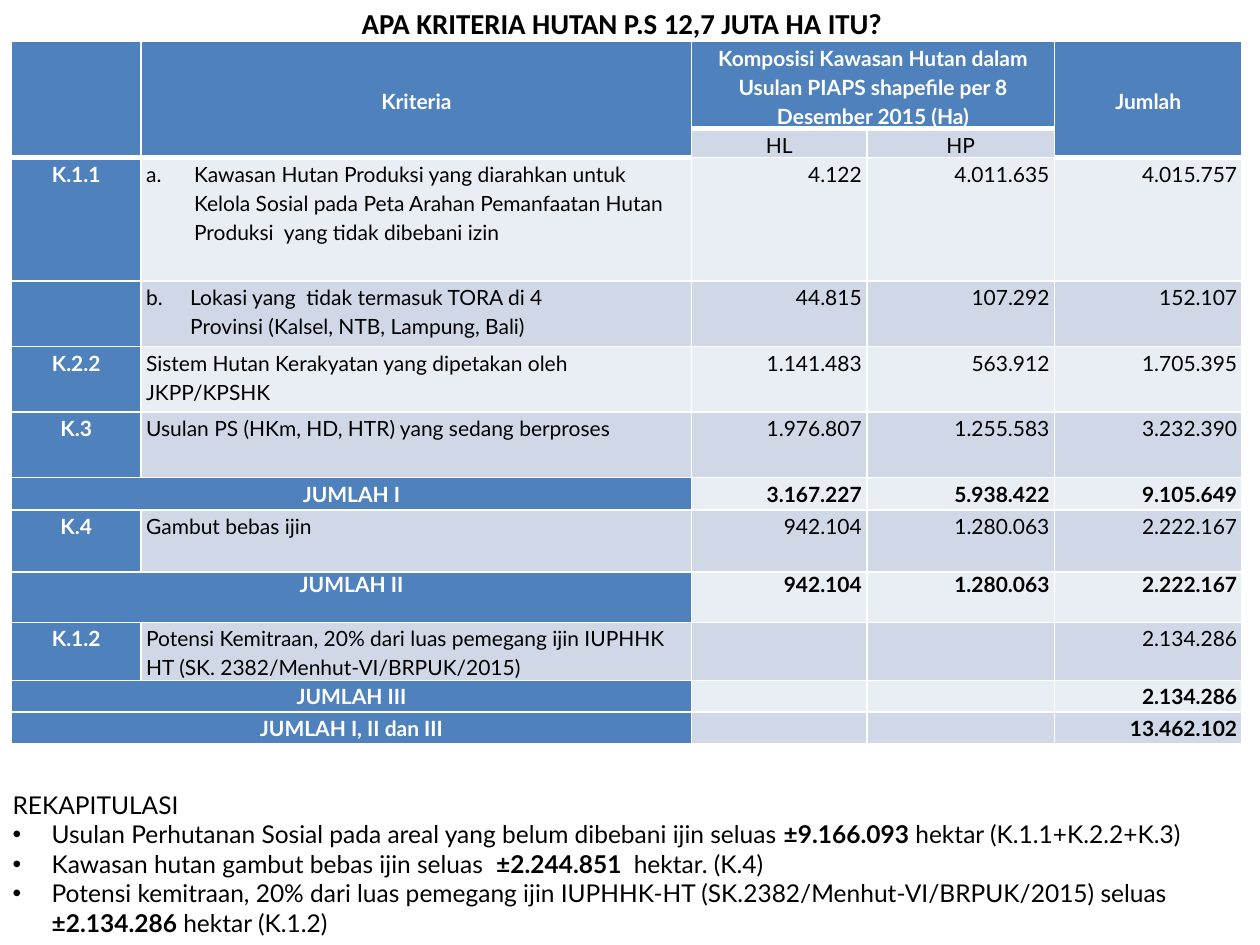
from dataclasses import dataclass

from lxml.etree import SubElement
from pptx import Presentation
from pptx.dml.color import RGBColor
from pptx.enum.text import MSO_ANCHOR, MSO_AUTO_SIZE, PP_ALIGN
from pptx.oxml.ns import qn
from pptx.util import Inches, Pt


@dataclass(frozen=True)
class Theme:
    header: str = "4F81BD"
    bands: tuple = ("D0D8E8", "E9EDF4")
    white: str = "FFFFFF"
    black: str = "000000"
    title_font: str = "Calibri"
    body_font: str = "Lato"
    title_size: float = 16.5
    body_size: float = 14
    table_size: float = 12


THEME = Theme()
TITLE = "APA KRITERIA HUTAN P.S 12,7 JUTA HA ITU?"
COL_WIDTHS = [1.03, 4.37, 1.39, 1.49, 1.49]
HEADER_HEIGHTS = [0.69, 0.22]
HEADERS = {
    (0, 1): "Kriteria",
    (0, 2): "Komposisi Kawasan Hutan dalam Usulan PIAPS shapefile per 8 Desember 2015 (Ha)",
    (0, 4): "Jumlah",
}
# Height, code or total label, criterion (None for a total), HL, HP, sum
ROWS = [
    (0.98, "K.1.1", "Kawasan Hutan Produksi yang diarahkan untuk Kelola Sosial pada Peta "
     "Arahan Pemanfaatan Hutan Produksi  yang tidak dibebani izin",
     "4.122", "4.011.635", "4.015.757"),
    (0.52, "", "Lokasi yang  tidak termasuk TORA di 4\vProvinsi (Kalsel, NTB, Lampung, Bali)",
     "44.815", "107.292", "152.107"),
    (0.52, "K.2.2", "Sistem Hutan Kerakyatan yang dipetakan oleh JKPP/KPSHK",
     "1.141.483", "563.912", "1.705.395"),
    (0.52, "K.3", "Usulan PS (HKm, HD, HTR) yang sedang berproses",
     "1.976.807", "1.255.583", "3.232.390"),
    (0.26, "JUMLAH I", None, "3.167.227", "5.938.422", "9.105.649"),
    (0.49, "K.4", "Gambut bebas ijin", "942.104", "1.280.063", "2.222.167"),
    (0.4, "JUMLAH II", None, "942.104", "1.280.063", "2.222.167"),
    (0.46, "K.1.2", "Potensi Kemitraan, 20% dari luas pemegang ijin IUPHHK HT "
     "(SK. 2382/Menhut-VI/BRPUK/2015)", "", "", "2.134.286"),
    (0.25, "JUMLAH III", None, "", "", "2.134.286"),
    (0.25, "JUMLAH I, II dan III", None, "", "", "13.462.102"),
]
LETTERED = {2: ("1", 0.38), 3: ("2", 0.35)}  # table row: list number, indent
# Runs alternate between regular and bold
RECAP = [
    ["REKAPITULASI"],
    ["Usulan Perhutanan Sosial pada areal yang belum dibebani ijin seluas ",
     "±9.166.093 ", "hektar (K.1.1+K.2.2+K.3)"],
    ["Kawasan hutan gambut bebas ijin seluas  ", "±2.244.851  ", "hektar. (K.4)"],
    ["Potensi kemitraan, 20% dari luas pemegang ijin IUPHHK-HT "
     "(SK.2382/Menhut-VI/BRPUK/2015) seluas ", "±2.134.286 ", "hektar (K.1.2)"],
]


def set_attrs(obj, values):
    for name, value in values.items():
        setattr(obj, name, value)


def style_run(r, font, size, color, bold):
    set_attrs(r.font, {"name": font, "size": Pt(size), "bold": bold})
    r.font.color.rgb = RGBColor.from_string(color)


def place(sp, left, top, width, height):
    set_attrs(sp, {"left": Inches(left), "top": Inches(top),
                   "width": Inches(width), "height": Inches(height)})


def set_bullet(p, indent, tag, **attrs):
    """Give the paragraph a hanging indent and the bullet element named by tag."""
    pPr = p._p.get_or_add_pPr()
    pPr.set("marL", str(Inches(indent)))
    pPr.set("indent", str(-Inches(indent)))
    SubElement(pPr, qn(tag), attrs)


def set_borders(cell, bottom):
    tcPr = cell._tc.get_or_add_tcPr()
    for side, width in {"L": 1, "R": 1, "T": 1, "B": bottom}.items():
        ln = SubElement(tcPr, qn(f"a:ln{side}"), w=str(Pt(width)))
        fill = SubElement(ln, qn("a:solidFill"))
        SubElement(fill, qn("a:srgbClr"), val=THEME.white)


def style_cell(cell, fill, bottom=1):
    set_attrs(cell, {"margin_left": Inches(0.04), "margin_right": Inches(0.04),
                     "margin_top": 0, "margin_bottom": 0})
    set_borders(cell, bottom)
    cell.fill.solid()
    cell.fill.fore_color.rgb = RGBColor.from_string(fill)
    # Keeps empty cells from stretching their row
    SubElement(cell.text_frame.paragraphs[0]._p, qn("a:endParaRPr"),
               sz=str(THEME.table_size * 100))


def write_cell(cell, text, align, color, bold=False, spacing=1.15):
    if not text:
        return
    p = cell.text_frame.paragraphs[0]
    p.text = text
    set_attrs(p, {"alignment": align, "line_spacing": spacing})
    for r in p.runs:
        style_run(r, THEME.body_font, THEME.table_size, color, bold)


def fill_header(table):
    for row in range(2):
        for col in range(5):
            sub = row == 1 and col in (2, 3)
            style_cell(table.cell(row, col), THEME.bands[0] if sub else THEME.header,
                       1 if sub else 3)
    for col in (0, 1, 4):
        table.cell(0, col).merge(table.cell(1, col))
    table.cell(0, 2).merge(table.cell(0, 3))
    for (row, col), text in HEADERS.items():
        cell = table.cell(row, col)
        write_cell(cell, text, PP_ALIGN.CENTER, THEME.white, True)
        if col != 2:
            cell.vertical_anchor = MSO_ANCHOR.MIDDLE
    for col, text in ((2, "HL"), (3, "HP")):
        write_cell(table.cell(1, col), text, PP_ALIGN.CENTER, THEME.black)


def fill_row(table, row, label, criterion, *values):
    total = criterion is None
    spacing = 1.0 if label == "JUMLAH II" else 1.15
    band = THEME.bands[(row + 1) % 2]
    for col in range(5):
        is_label = col == 0 or (total and col == 1)
        style_cell(table.cell(row, col), THEME.header if is_label else band)
    if total:
        table.cell(row, 0).merge(table.cell(row, 1))
    else:
        write_cell(table.cell(row, 1), criterion, PP_ALIGN.LEFT, THEME.black)
    write_cell(table.cell(row, 0), label, PP_ALIGN.CENTER, THEME.white, True, spacing)
    for col, value in enumerate(values, 2):
        write_cell(table.cell(row, col), value, PP_ALIGN.RIGHT, THEME.black, total, spacing)
    if row in LETTERED:
        number, indent = LETTERED[row]
        set_bullet(table.cell(row, 1).text_frame.paragraphs[0], indent,
                   "a:buAutoNum", type="alphaLcPeriod", startAt=number)


def add_criteria_table(s):
    heights = HEADER_HEIGHTS + [height for height, *_ in ROWS]
    frame = s.shapes.add_table(len(heights), len(COL_WIDTHS), Inches(0.09), Inches(0.33),
                               Inches(sum(COL_WIDTHS)), Inches(sum(heights)))
    table = frame.table
    set_attrs(table, {"first_row": False, "horz_banding": False})
    for column, width in zip(table.columns, COL_WIDTHS):
        column.width = Inches(width)
    for table_row, height in zip(table.rows, heights):
        table_row.height = Inches(height)
    fill_header(table)
    for row, (_, *content) in enumerate(ROWS, len(HEADER_HEIGHTS)):
        fill_row(table, row, *content)


def write_title(sp):
    place(sp, 0.52, 0, 8.83, 0.37)
    tf = sp.text_frame
    set_attrs(tf, {"text": TITLE, "auto_size": MSO_AUTO_SIZE.NONE, "word_wrap": True})
    p = tf.paragraphs[0]
    p.alignment = PP_ALIGN.CENTER
    style_run(p.runs[0], THEME.title_font, THEME.title_size, THEME.black, True)


def write_recap(sp):
    place(sp, 0, 6.22, 9.88, 1.28)
    tf = sp.text_frame
    set_attrs(tf, {"auto_size": MSO_AUTO_SIZE.NONE, "word_wrap": True})
    for i, parts in enumerate(RECAP):
        p = tf.add_paragraph() if i else tf.paragraphs[0]
        p.space_before = Pt(0)
        if i:
            set_bullet(p, 0.31, "a:buChar", char="•")
        else:
            set_bullet(p, 0, "a:buNone")
        for j, text in enumerate(parts):
            r = p.add_run()
            r.text = text
            style_run(r, THEME.body_font, THEME.body_size, THEME.black, j % 2 == 1)


def main():
    prs = Presentation()
    set_attrs(prs, {"slide_width": Inches(10), "slide_height": Inches(7.5)})
    s = prs.slides.add_slide(prs.slide_layouts[1])
    write_recap(s.placeholders[1])
    write_title(s.shapes.title)
    add_criteria_table(s)
    prs.save("out.pptx")


if __name__ == "__main__":
    main()
